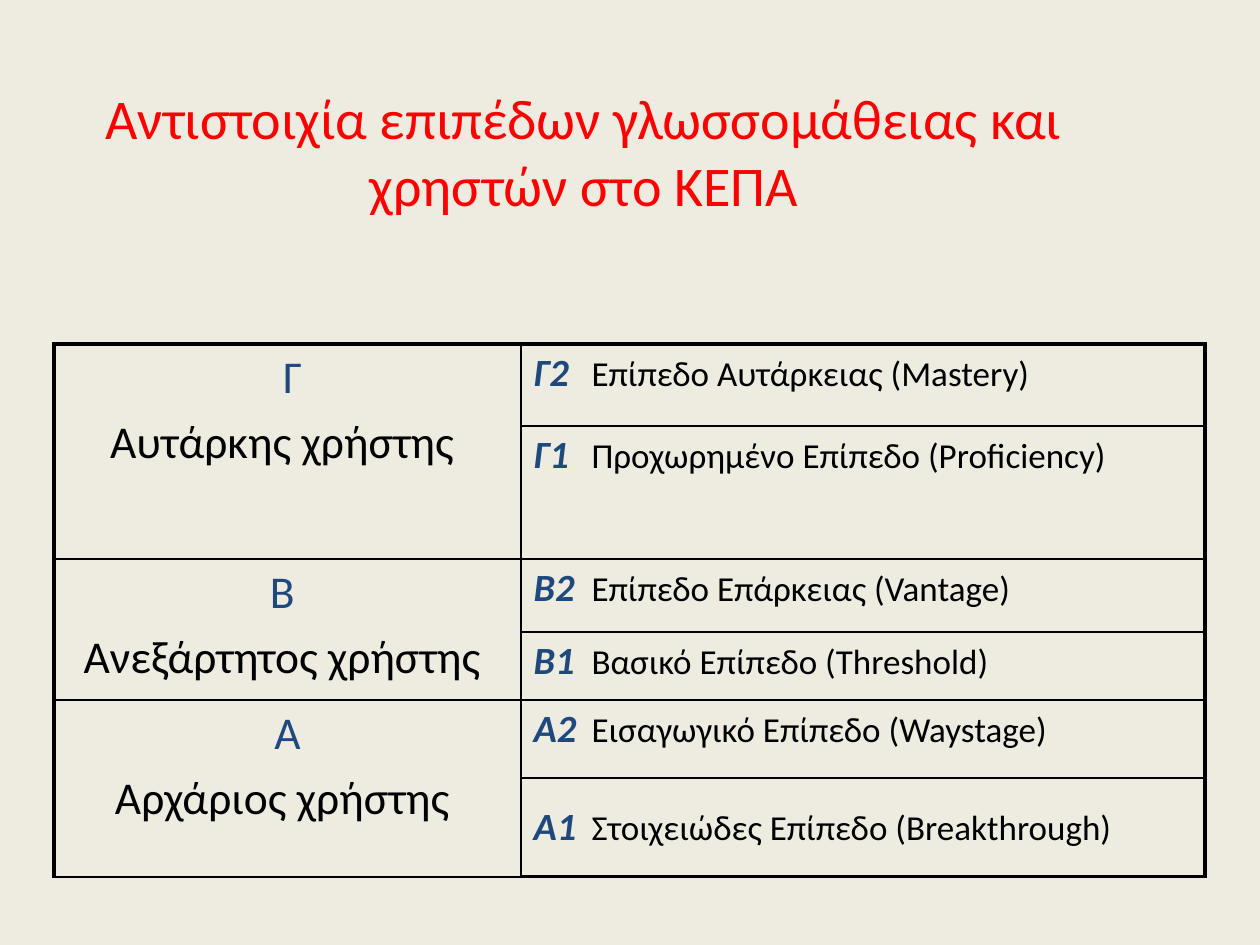
import lxml.etree
import pptx
import pptx.dml.color
import pptx.enum.text
import pptx.oxml.ns
import pptx.util

PX = 914400 // 126
FONT = "Calibri"
CREAM = pptx.dml.color.RGBColor(0xEE, 0xEC, 0xE1)
RED = pptx.dml.color.RGBColor(0xFF, 0x00, 0x00)
NAVY = pptx.dml.color.RGBColor(0x1F, 0x49, 0x7D)
BLACK = pptx.dml.color.RGBColor(0x00, 0x00, 0x00)
OUTER, INNER = 2.25, 1
TAB = 58
qn = pptx.oxml.ns.qn


def style(font, size, color, strong=False):
    font.name = FONT
    font.size = pptx.util.Pt(size)
    font.color.rgb = color
    font.bold = font.italic = strong


def set_borders(cell, widths):
    properties = cell._tc.get_or_add_tcPr()
    for position, (side, width) in enumerate(widths.items()):
        line = lxml.etree.Element(qn(f"a:ln{side}"), w=str(pptx.util.Pt(width)))
        fill = lxml.etree.SubElement(line, qn("a:solidFill"))
        lxml.etree.SubElement(fill, qn("a:srgbClr"), val=str(BLACK))
        properties.insert(position, line)


presentation = pptx.Presentation()
presentation.slide_width = 1260 * PX
presentation.slide_height = 945 * PX
slide = presentation.slides.add_slide(presentation.slide_layouts[6])
slide.background.fill.solid()
slide.background.fill.fore_color.rgb = CREAM

# Title
title = slide.shapes.add_textbox(64 * PX, 45 * PX, 1040 * PX, 179 * PX).text_frame
title.word_wrap = True
title.vertical_anchor = pptx.enum.text.MSO_ANCHOR.BOTTOM
title.text = "Αντιστοιχία επιπέδων γλωσσομάθειας και χρηστών στο ΚΕΠΑ"
title.paragraphs[0].alignment = pptx.enum.text.PP_ALIGN.CENTER
style(title.paragraphs[0].runs[0].font, 32, RED)

# Table grid
users = [(" Γ", "Αυτάρκης χρήστης "), ("Β ", "Ανεξάρτητος χρήστης "), ("Α", "Αρχάριος χρήστης ")]
levels = [
    ("Γ2", "Επίπεδο Αυτάρκειας (Mastery)"),
    ("Γ1", "Προχωρημένο Επίπεδο (Proficiency)"),
    ("B2", "Επίπεδο Επάρκειας (Vantage)"),
    ("Β1", "Βασικό Επίπεδο (Threshold)"),
    ("A2", "Εισαγωγικό Επίπεδο (Waystage)"),
    ("Α1", "Στοιχειώδες Επίπεδο (Breakthrough)"),
]
column_widths = [467, 684]
row_heights = [82, 133, 73, 68, 78, 99]
table = slide.shapes.add_table(
    len(levels), 2, 54 * PX, 344 * PX, sum(column_widths) * PX, sum(row_heights) * PX
).table
table.first_row = table.horz_banding = False
for column, width in zip(table.columns, column_widths):
    column.width = width * PX
for row, height in zip(table.rows, row_heights):
    row.height = height * PX

# Fills and borders: heavy frame, thin inner lines
last = len(levels) - 1
for r in range(len(levels)):
    for c in range(2):
        cell = table.cell(r, c)
        cell.fill.background()
        set_borders(cell, {
            "L": OUTER if c == 0 else INNER,
            "R": OUTER if c == 1 else INNER,
            "T": OUTER if r == 0 else INNER,
            "B": OUTER if r == last else INNER,
        })

# User groups, each spanning two levels
for group, (letter, user) in enumerate(users):
    user_cell = table.cell(2 * group, 0)
    user_cell.merge(table.cell(2 * group + 1, 0))
    user_cell.text_frame.text = f"{letter}\n{user}"
    for paragraph, color in zip(user_cell.text_frame.paragraphs, (NAVY, BLACK)):
        paragraph.alignment = pptx.enum.text.PP_ALIGN.CENTER
        style(paragraph.runs[0].font, 26, color)
    user_cell.text_frame.paragraphs[1].space_before = pptx.util.Pt(5.2)
    # The covered cell's bottom line closes the group
    set_borders(table.cell(2 * group + 1, 0), {})

# Levels: code, tab, description
for r, (code, description) in enumerate(levels):
    level_cell = table.cell(r, 1)
    paragraph = level_cell.text_frame.paragraphs[0]
    tabs = lxml.etree.SubElement(paragraph._p.get_or_add_pPr(), qn("a:tabLst"))
    lxml.etree.SubElement(tabs, qn("a:tab"), pos=str(TAB * PX), algn="l")
    code_run = paragraph.add_run()
    code_run.text = code
    style(code_run.font, 22, NAVY, strong=True)
    description_run = paragraph.add_run()
    description_run.text = f"\t{description}"
    style(description_run.font, 20, BLACK)
table.cell(last, 1).vertical_anchor = pptx.enum.text.MSO_ANCHOR.MIDDLE

presentation.save("out.pptx")
